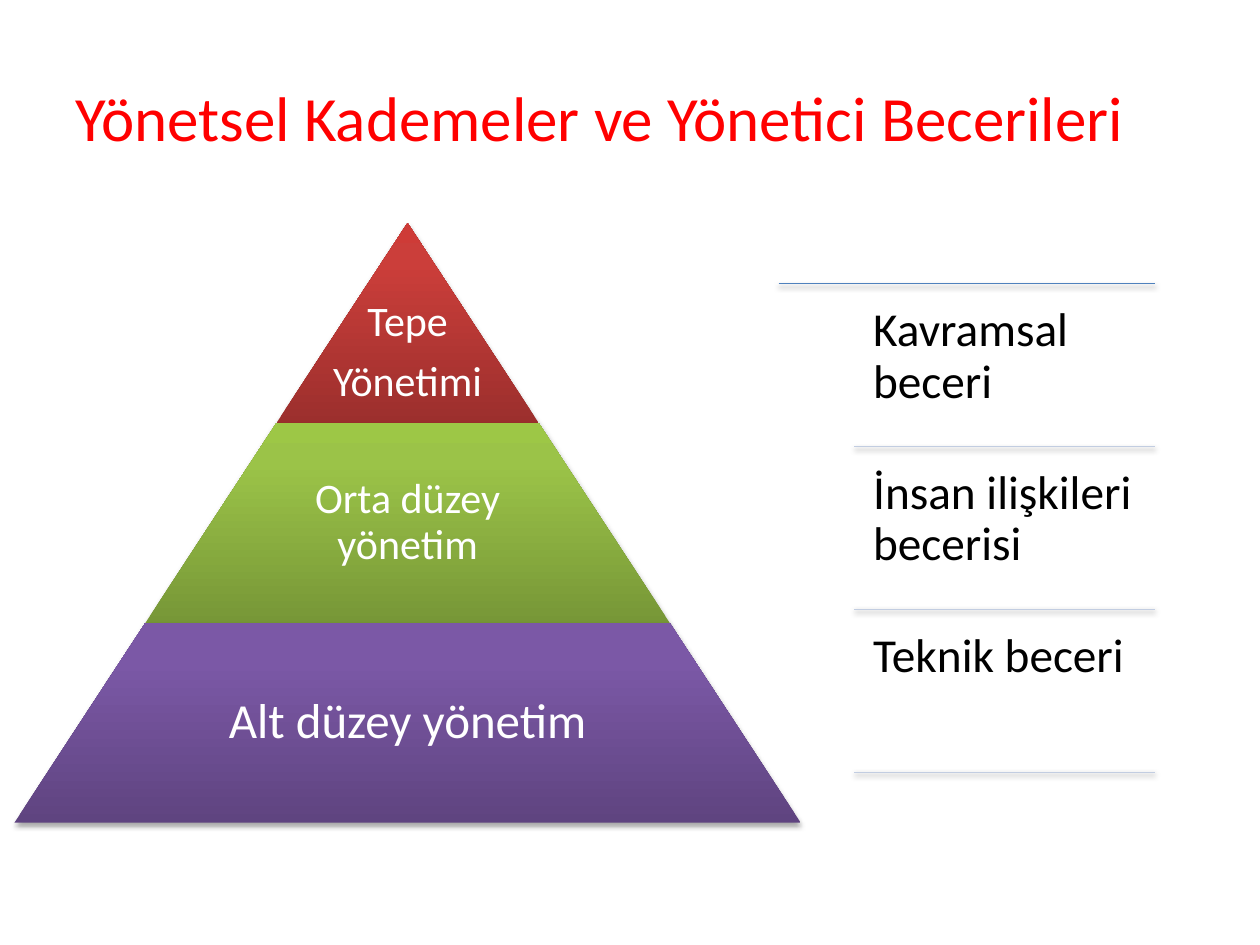
from dataclasses import dataclass

from pptx import Presentation
from pptx.dml.color import RGBColor
from pptx.enum.shapes import MSO_CONNECTOR, MSO_SHAPE
from pptx.enum.text import MSO_ANCHOR, PP_ALIGN
from pptx.oxml import parse_xml
from pptx.oxml.ns import nsdecls, qn
from pptx.util import Inches, Pt

TRAPEZOID = MSO_SHAPE.TRAPEZOID
STRAIGHT = MSO_CONNECTOR.STRAIGHT
LEFT, CENTER = PP_ALIGN.LEFT, PP_ALIGN.CENTER
TOP, MIDDLE = MSO_ANCHOR.TOP, MSO_ANCHOR.MIDDLE

FONT = "Calibri"
COLORS = {
    "title": "FF0000",
    "skill": "000000",
    "tier": "FFFFFF",
    "first_rule": "4F81BD",
    "rule": "C2CDE1",
    "shadow": "000000",
}

# Pyramid and skill list geometry, in inches
APEX_X, APEX_Y = 3.235, 1.77
TIER_H = 4.76 / 3
TIER_STEP = 2.08
LIST_Y, LIST_STEP = 2.25, 1.293
RULE_RIGHT = 9.17


@dataclass
class Tier:
    text: str
    size: int
    gradient: tuple[str, str, str]
    text_share: float = 0.65
    top_inset: float = 0.03


TIERS = [
    Tier("Tepe\nYönetimi", 24, ("9C2F2D", "CB3E3A", "CE3B37"), 1, 0.51),
    Tier("Orta düzey yönetim", 24, ("779737", "9BC348", "9DC746")),
    Tier("Alt düzey yönetim", 28, ("5F4480", "7B58A6", "7C57A8")),
]
SKILLS = ["Kavramsal beceri", "İnsan ilişkileri becerisi", "Teknik beceri"]


def add_text(slide, text: str, x: float, y: float, w: float, h: float, *,
             size: int, color: str, align=LEFT, anchor=MIDDLE,
             insets=(0.1, 0.05, 0.1, 0.05), line_spacing=1.0,
             space_after=0.0) -> None:
    """Add a text box with one paragraph per line of text."""
    tf = slide.shapes.add_textbox(
        Inches(x), Inches(y), Inches(w), Inches(h)).text_frame
    tf.word_wrap = True
    tf.vertical_anchor = anchor
    tf.margin_left, tf.margin_top, tf.margin_right, tf.margin_bottom = map(
        Inches, insets)
    for i, line in enumerate(text.split("\n")):
        p = tf.paragraphs[0] if i == 0 else tf.add_paragraph()
        p.alignment = align
        p.line_spacing = line_spacing
        p.space_after = Pt(space_after)
        r = p.add_run()
        r.text = line
        r.font.name = FONT
        r.font.size = Pt(size)
        r.font.color.rgb = RGBColor.from_string(COLORS[color])


def add_shadow(s, alpha: int, blur: float, dist: float) -> None:
    """Give a shape or connector a soft shadow straight below it."""
    s.element.spPr.append(parse_xml(
        f'<a:effectLst {nsdecls("a")}>'
        f'<a:outerShdw blurRad="{Pt(blur)}" dist="{Pt(dist)}" '
        f'dir="5400000" rotWithShape="0">'
        f'<a:srgbClr val="{COLORS["shadow"]}">'
        f'<a:alpha val="{alpha * 1000}"/></a:srgbClr>'
        f'</a:outerShdw></a:effectLst>'))


def add_rule(slide, left: float, y: float, color: str, alpha: int,
             dist: float) -> None:
    s = slide.shapes.add_connector(
        STRAIGHT, Inches(left), Inches(y), Inches(RULE_RIGHT), Inches(y))
    s.line.color.rgb = RGBColor.from_string(COLORS[color])
    s.line.width = Pt(0.75)
    add_shadow(s, alpha, 3.1, dist)


def set_gradient(s, colors: tuple[str, str, str]) -> None:
    """Fill from bottom to top with stops at 0, 80 and 100 percent."""
    s.fill.gradient()
    stops = "".join(
        f'<a:gs pos="{pos * 1000}"><a:srgbClr val="{c}"/></a:gs>'
        for pos, c in zip((0, 80, 100), colors))
    old = s.element.spPr.find(qn("a:gradFill"))
    s.element.spPr.replace(old, parse_xml(
        f'<a:gradFill {nsdecls("a")} rotWithShape="1">'
        f'<a:gsLst>{stops}</a:gsLst>'
        f'<a:lin ang="16200000" scaled="0"/></a:gradFill>'))


def add_tier(slide, index: int, tier: Tier) -> None:
    w = TIER_STEP * (index + 1)
    y = APEX_Y + TIER_H * index
    s = slide.shapes.add_shape(
        TRAPEZOID, Inches(APEX_X - w / 2), Inches(y), Inches(w), Inches(TIER_H))
    s.adjustments[0] = TIER_STEP / 2 / TIER_H
    set_gradient(s, tier.gradient)
    s.line.fill.background()
    add_shadow(s, 35, 3.1, 1.8)

    text_w = w * tier.text_share
    add_text(slide, tier.text, APEX_X - text_w / 2, y, text_w, TIER_H,
             size=tier.size, color="tier", align=CENTER,
             insets=(0.03, tier.top_inset, 0.03, 0.03),
             line_spacing=0.9, space_after=0.35 * tier.size)


def main() -> None:
    prs = Presentation()
    prs.slide_width, prs.slide_height = Inches(10), Inches(7.5)
    slide = prs.slides.add_slide(prs.slide_layouts[6])

    # Skill list with a rule above each entry and one below the last
    add_rule(slide, 6.18, LIST_Y, "first_rule", 35, 1.8)
    for i, skill in enumerate(SKILLS):
        y = LIST_Y + LIST_STEP * i
        add_text(slide, skill, 6.82, y + 0.07, 2.35, 1.23,
                 size=27, color="skill", anchor=TOP, insets=(0.11,) * 4,
                 line_spacing=0.9, space_after=0.35 * 27)
        add_rule(slide, 6.78, y + LIST_STEP, "rule", 38, 1.6)

    # Management pyramid
    for i, tier in enumerate(TIERS):
        add_tier(slide, i, tier)

    # Title
    add_text(slide, "Yönetsel Kademeler ve Yönetici Becerileri",
             0.5, 0.3, 9, 1.25, size=36, color="title")

    prs.save("out.pptx")


if __name__ == "__main__":
    main()
